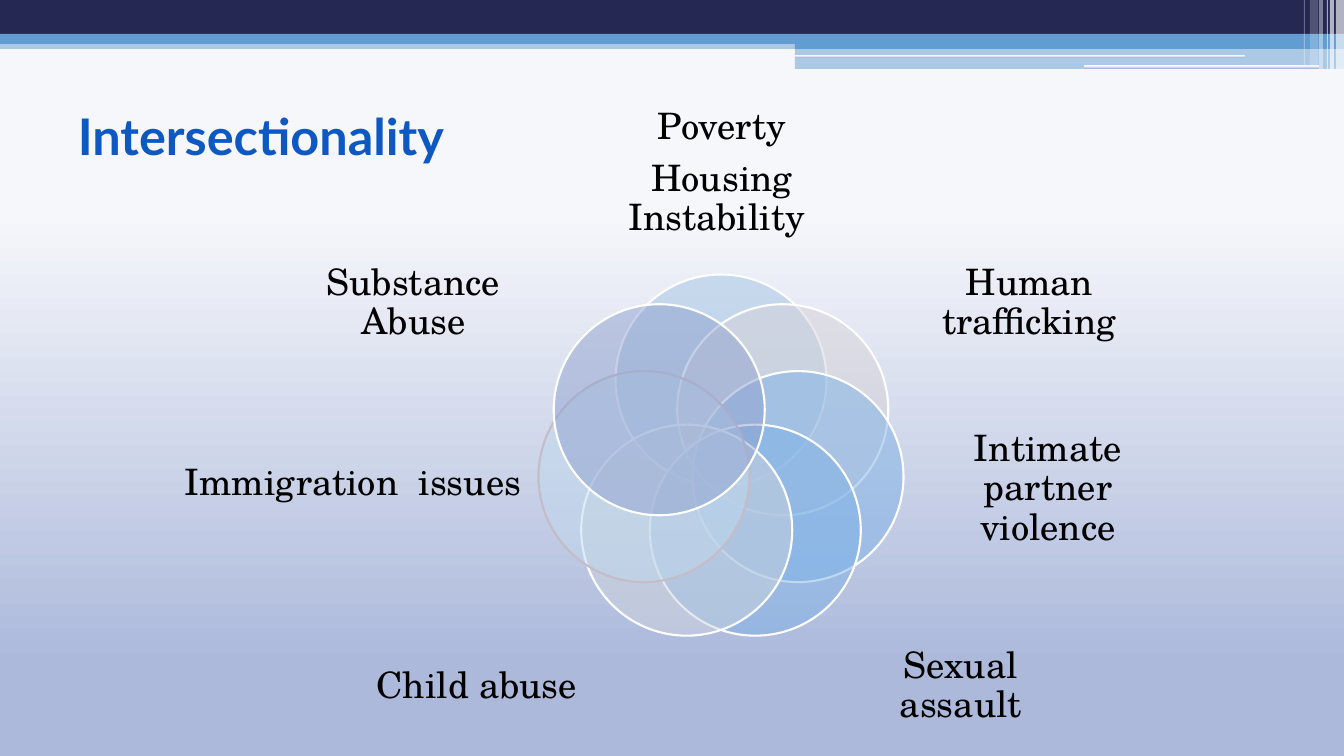
from math import cos, radians, sin

from lxml.etree import SubElement
from pptx import Presentation
from pptx.dml.color import RGBColor
from pptx.enum.shapes import MSO_SHAPE
from pptx.enum.text import MSO_ANCHOR, PP_ALIGN
from pptx.oxml.ns import qn
from pptx.util import Pt

PX = 914400 / 100.8
WHITE = RGBColor(0xFF, 0xFF, 0xFF)
BLACK = RGBColor(0x00, 0x00, 0x00)
NAVY = RGBColor(0x24, 0x28, 0x52)
BLUE = RGBColor(0x62, 0x9D, 0xD1)
TITLE_BLUE = RGBColor(0x0E, 0x58, 0xC4)
PALE_BLUE = RGBColor(0xA1, 0xC4, 0xE3)
PALE_GREY = RGBColor(0xD8, 0xD3, 0xD9)
SKY = RGBColor(0x7E, 0xB2, 0xE6)
BLUE_GREY = RGBColor(0xCC, 0xD2, 0xDD)
ICE = RGBColor(0xC0, 0xD8, 0xED)
PERIWINKLE = RGBColor(0x90, 0xA2, 0xCF)
MAUVE = RGBColor(0xC4, 0xBC, 0xC6)
GRADIENT = [(28, "F6F7FB"), (88, "ACB9DB"), (100, "ACB9DB"), (100, "C8D1E7")]


def add_filled(kind, box, color, opacity=100):
    shape = slide.shapes.add_shape(kind, *[round(length * PX) for length in box])
    shape.shadow.inherit = False
    shape.line.fill.background()
    shape.fill.solid()
    shape.fill.fore_color.rgb = color
    if opacity < 100:
        solid_color = shape.element.spPr.find(qn("a:solidFill"))[0]
        SubElement(solid_color, qn("a:alpha"), val=str(opacity * 1000))
    return shape


def apply_gradient(fill, element):
    fill.gradient()
    fill.gradient_angle = 270
    stops = element.xpath(".//a:gsLst")[0]
    for stop in list(stops):
        stops.remove(stop)
    for position, color in GRADIENT:
        stop = SubElement(stops, qn("a:gs"), pos=str(position * 1000))
        SubElement(stop, qn("a:srgbClr"), val=color)


presentation = Presentation()
presentation.slide_width = round(1344 * PX)
presentation.slide_height = round(756 * PX)
slide = presentation.slides.add_slide(presentation.slide_layouts[6])
apply_gradient(slide.background.fill, slide.element)

header_bands = [
    ((0, 40, 1344, 9), BLUE, 50),
    ((0, 0, 1344, 34), NAVY, 100),
    ((0, 34, 1344, 10), BLUE, 100),
    ((795, 39, 549, 10), BLUE, 100),
    ((795, 49, 549, 20), BLUE, 50),
]
for box, color, opacity in header_bands:
    add_filled(MSO_SHAPE.RECTANGLE, box, color, opacity)

for box in [(795, 55, 450, 3), (1084, 65, 235, 4)]:
    bar = add_filled(MSO_SHAPE.ROUNDED_RECTANGLE, box, WHITE)
    apply_gradient(bar.fill, bar.element)

corner_stripes = [
    (1336, 8, 69, 65),
    (1330, 4, 69, 65),
    (1327, 1, 69, 60),
    (1319, 4, 69, 40),
    (1310, 8, 65, 20),
    (1304, 1, 65, 30),
]
for left, width, height, opacity in corner_stripes:
    add_filled(MSO_SHAPE.RECTANGLE, (left, 0, width, height), WHITE, opacity)

title = slide.shapes.add_textbox(*[round(length * PX) for length in (68, 76, 1210, 118)])
title.text_frame.word_wrap = True
title.text_frame.vertical_anchor = MSO_ANCHOR.MIDDLE
run = title.text_frame.paragraphs[0].add_run()
run.text = "Intersectionality"
run.font.name = "Lato"
run.font.size = Pt(36)
run.font.bold = True
run.font.color.rgb = TITLE_BLUE

CENTER_X, CENTER_Y = 721, 459
RING_RADIUS, DIAMETER = 79, 211
factors = [
    (PALE_BLUE, WHITE, (601, 109, 242, 129), ["Poverty", "Housing Instability "]),
    (PALE_GREY, WHITE, (915, 232, 229, 142), ["Human trafficking"]),
    (SKY, WHITE, (936, 413, 224, 152), ["Intimate partner violence"]),
    (SKY, WHITE, (840, 617, 242, 139), ["Sexual assault"]),
    (BLUE_GREY, WHITE, (361, 617, 242, 139), ["Child abuse "]),
    (ICE, MAUVE, (184, 408, 338, 152), ["Immigration  issues"]),
    (PERIWINKLE, WHITE, (299, 232, 229, 142), ["Substance Abuse"]),
]
for index, (color, outline, label_box, lines) in enumerate(factors):
    angle = radians(360 / len(factors) * index)
    left = CENTER_X + RING_RADIUS * sin(angle) - DIAMETER / 2
    top = CENTER_Y - RING_RADIUS * cos(angle) - DIAMETER / 2
    circle = add_filled(MSO_SHAPE.OVAL, (left, top, DIAMETER, DIAMETER), color, 50)
    circle.line.color.rgb = outline
    circle.line.width = Pt(1.5)

    label = slide.shapes.add_textbox(*[round(length * PX) for length in label_box])
    frame = label.text_frame
    frame.word_wrap = True
    frame.vertical_anchor = MSO_ANCHOR.MIDDLE
    frame.margin_left = frame.margin_right = frame.margin_top = frame.margin_bottom = 0
    for number, line in enumerate(lines):
        paragraph = frame.add_paragraph() if number else frame.paragraphs[0]
        paragraph.alignment = PP_ALIGN.CENTER
        paragraph.line_spacing = 0.9
        paragraph.space_after = Pt(9)
        run = paragraph.add_run()
        run.text = line
        run.font.name = "TeX Gyre Schola"
        run.font.size = Pt(26)
        run.font.color.rgb = BLACK

presentation.save("out.pptx")
